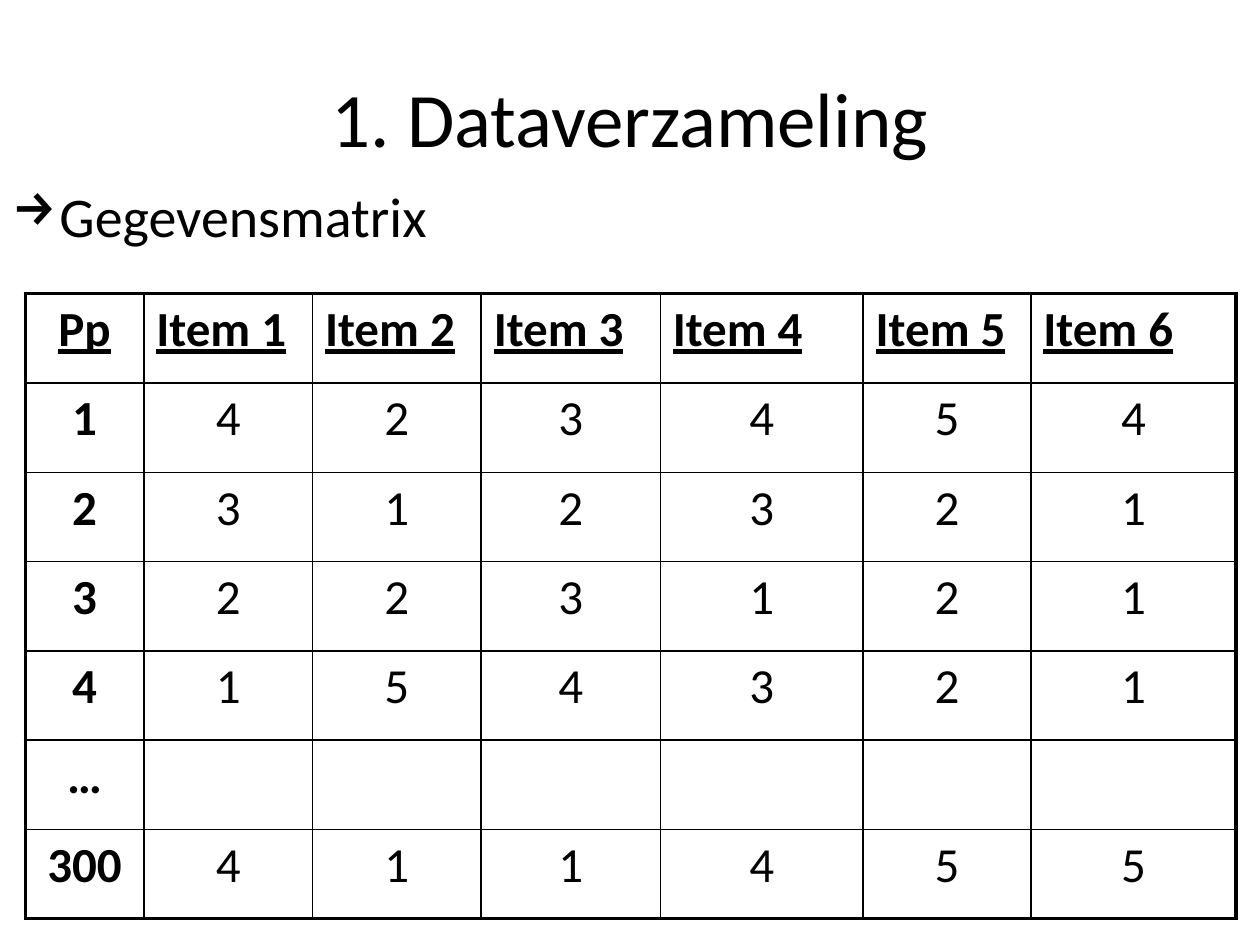
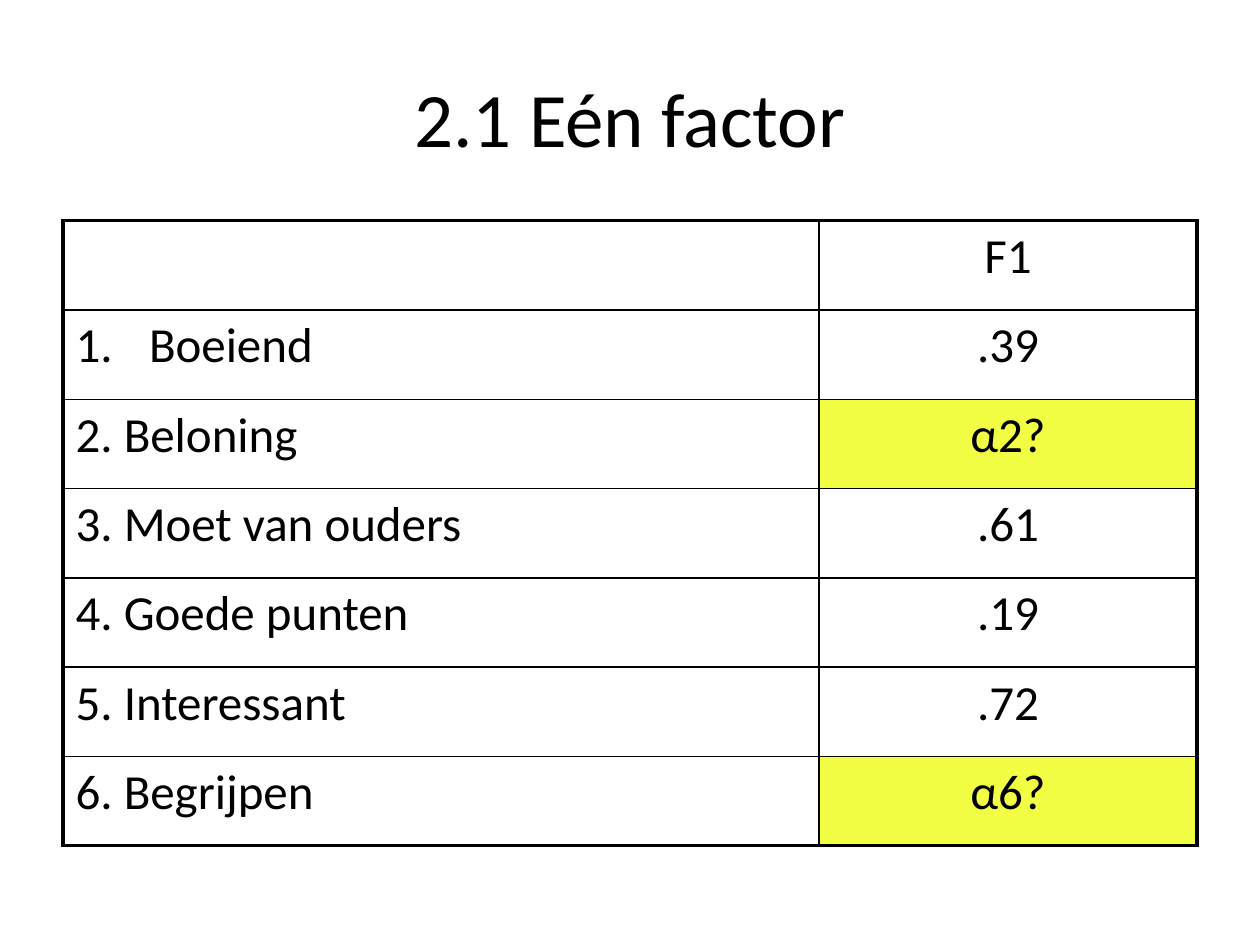
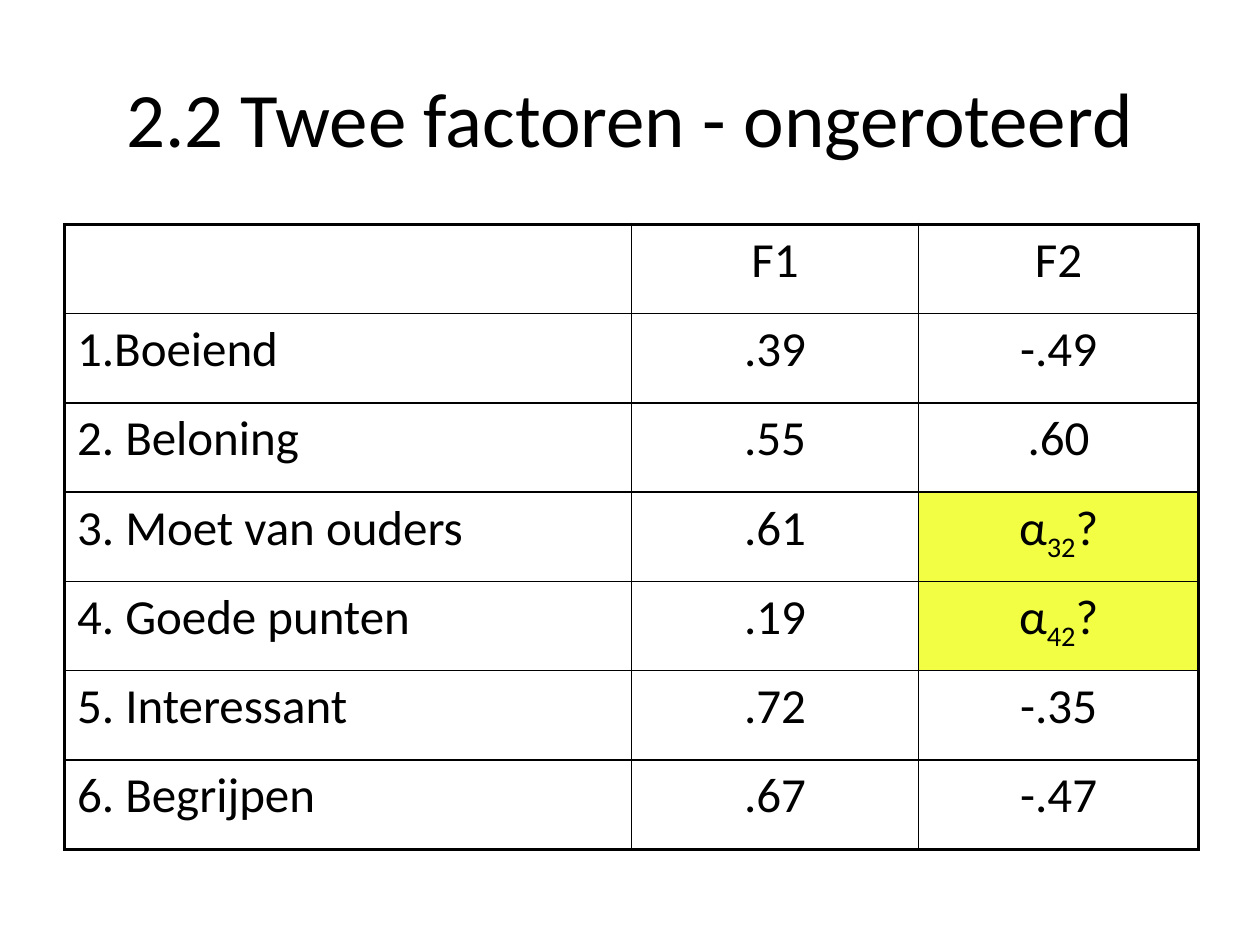
"""Build three slides on collecting questionnaire data and factor loadings."""
from lxml.etree import SubElement
from pptx import Presentation
from pptx.dml.color import RGBColor
from pptx.enum.text import MSO_ANCHOR, PP_ALIGN
from pptx.oxml import parse_xml
from pptx.oxml.ns import nsdecls, qn
from pptx.util import Cm, Pt

FONT = "Calibri"
INK = "000000"
HIGHLIGHT = "F1FE44"
ROW_HEIGHT = 1.8
STATEMENTS = ["2. Beloning", "3. Moet van ouders", "4. Goede punten",
              "5. Interessant", "6. Begrijpen"]


def color(value):
    return RGBColor.from_string(value)


class Deck:
    def __init__(self):
        self.presentation = Presentation()
        self.presentation.slide_width = Cm(25.4)
        self.presentation.slide_height = Cm(19.05)
        self.slide = None

    def add_slide(self, heading):
        layout = self.presentation.slide_layouts.get_by_name("Title Only")
        self.slide = self.presentation.slides.add_slide(layout)
        title = self.slide.shapes.title
        title.left, title.top, title.width, title.height = Cm(1.27), Cm(0.76), Cm(22.86), Cm(3.18)
        title.text_frame.vertical_anchor = MSO_ANCHOR.MIDDLE
        self.set_text(title.text_frame, heading, 44, PP_ALIGN.CENTER, spaced=False)

    def set_text(self, frame, content, size, align, spaced=True):
        paragraph = frame.paragraphs[0]
        if isinstance(content, tuple):
            for position, part in enumerate(content):
                run = paragraph.add_run()
                run.text = part
                if position == 1:
                    run.font._element.set("baseline", "-25000")
        else:
            paragraph.text = content
        paragraph.alignment = align
        if spaced:
            spacing = SubElement(paragraph._p.get_or_add_pPr(), qn("a:spcBef"))
            SubElement(spacing, qn("a:spcPct")).set("val", "20000")
        paragraph.font.name = FONT
        paragraph.font.size = Pt(size)
        paragraph.font.color.rgb = color(INK)
        return paragraph

    def mark(self, paragraph, indent, tag, **settings):
        properties = paragraph._p.get_or_add_pPr()
        properties.set("marL", str(Cm(indent)))
        properties.set("indent", str(-Cm(indent)))
        attributes = " ".join(f'{key}="{value}"' for key, value in settings.items())
        properties.insert(1, parse_xml(f"<a:{tag} {nsdecls('a')} {attributes}/>"))

    def lead(self, content, left, top, width, height):
        box = self.slide.shapes.add_textbox(Cm(left), Cm(top), Cm(width), Cm(height))
        box.text_frame.word_wrap = True
        paragraph = self.set_text(box.text_frame, content, 32, PP_ALIGN.LEFT)
        self.mark(paragraph, 0.95, "buChar", char="→")

    def border(self, cell, side, width):
        line = SubElement(cell._tc.get_or_add_tcPr(), qn(f"a:{side}"), w=str(Pt(width)))
        fill = SubElement(line, qn("a:solidFill"))
        SubElement(fill, qn("a:srgbClr"), val=INK)

    def table(self, rows, left, top, widths, left_aligned, highlighted=()):
        table = self.slide.shapes.add_table(
            len(rows), len(widths), Cm(left), Cm(top),
            Cm(sum(widths)), Cm(ROW_HEIGHT * len(rows))).table
        table.first_row = table.horz_banding = False
        for column, width in zip(table.columns, widths):
            column.width = Cm(width)
        for r, row in enumerate(rows):
            table.rows[r].height = Cm(ROW_HEIGHT)
            for c, content in enumerate(row):
                cell = table.cell(r, c)
                align = PP_ALIGN.LEFT if left_aligned(r, c) else PP_ALIGN.CENTER
                self.set_text(cell.text_frame, content, 28, align)
                outer = {"lnL": c == 0, "lnR": c == len(widths) - 1,
                         "lnT": r == 0, "lnB": r == len(rows) - 1}
                for side, is_outer in outer.items():
                    self.border(cell, side, 2.25 if is_outer else 1)
                if (r, c) in highlighted:
                    cell.fill.solid()
                    cell.fill.fore_color.rgb = color(HIGHLIGHT)
                else:
                    cell.fill.background()
        return table

    def loadings(self, factors, left, top, widths, number_indent, highlighted):
        labels = ["", "Boeiend", *STATEMENTS]
        rows = list(zip(labels, *factors))
        table = self.table(rows, left, top, widths, lambda r, c: c == 0, highlighted)
        first_statement = table.cell(1, 0).text_frame.paragraphs[0]
        self.mark(first_statement, number_indent, "buAutoNum", type="arabicPeriod")


def main():
    deck = Deck()

    deck.add_slide("1. Dataverzameling")
    deck.lead("Gegevensmatrix", 0, 3.53, 22.86, 13.49)
    answers = {"1": "423454", "2": "312321", "3": "223121",
               "4": "154321", "…": [""] * 6, "300": "411455"}
    matrix = [["Pp", *(f"Item {n}" for n in range(1, 7))]]
    matrix += [[person, *scores] for person, scores in answers.items()]
    data = deck.table(matrix, 0.51, 5.92, [2.39, 3.4, 3.4, 3.61, 4.09, 3.38, 4.14],
                      lambda r, c: r == 0 and c > 0)
    for r in range(len(matrix)):
        for c in range(len(matrix[0])):
            font = data.cell(r, c).text_frame.paragraphs[0].font
            font.bold = r == 0 or c == 0
            font.underline = r == 0

    deck.add_slide("2.1 Eén factor")
    deck.loadings([["F1", ".39", "α2?", ".61", ".19", ".72", "α6?"]],
                  1.27, 4.45, [15.24, 7.62], 1.48, {(2, 1), (6, 1)})

    deck.add_slide("2.2 Twee factoren - ongeroteerd")
    deck.loadings([["F1", ".39", ".55", ".61", ".19", ".72", ".67"],
                   ["F2", "-.49", ".60", ("α", "32", "?"), ("α", "42", "?"), "-.35", "-.47"]],
                  1.3, 4.52, [11.43, 5.79, 5.64], 0, {(3, 2), (4, 2)})

    deck.presentation.save("out.pptx")


if __name__ == "__main__":
    main()
